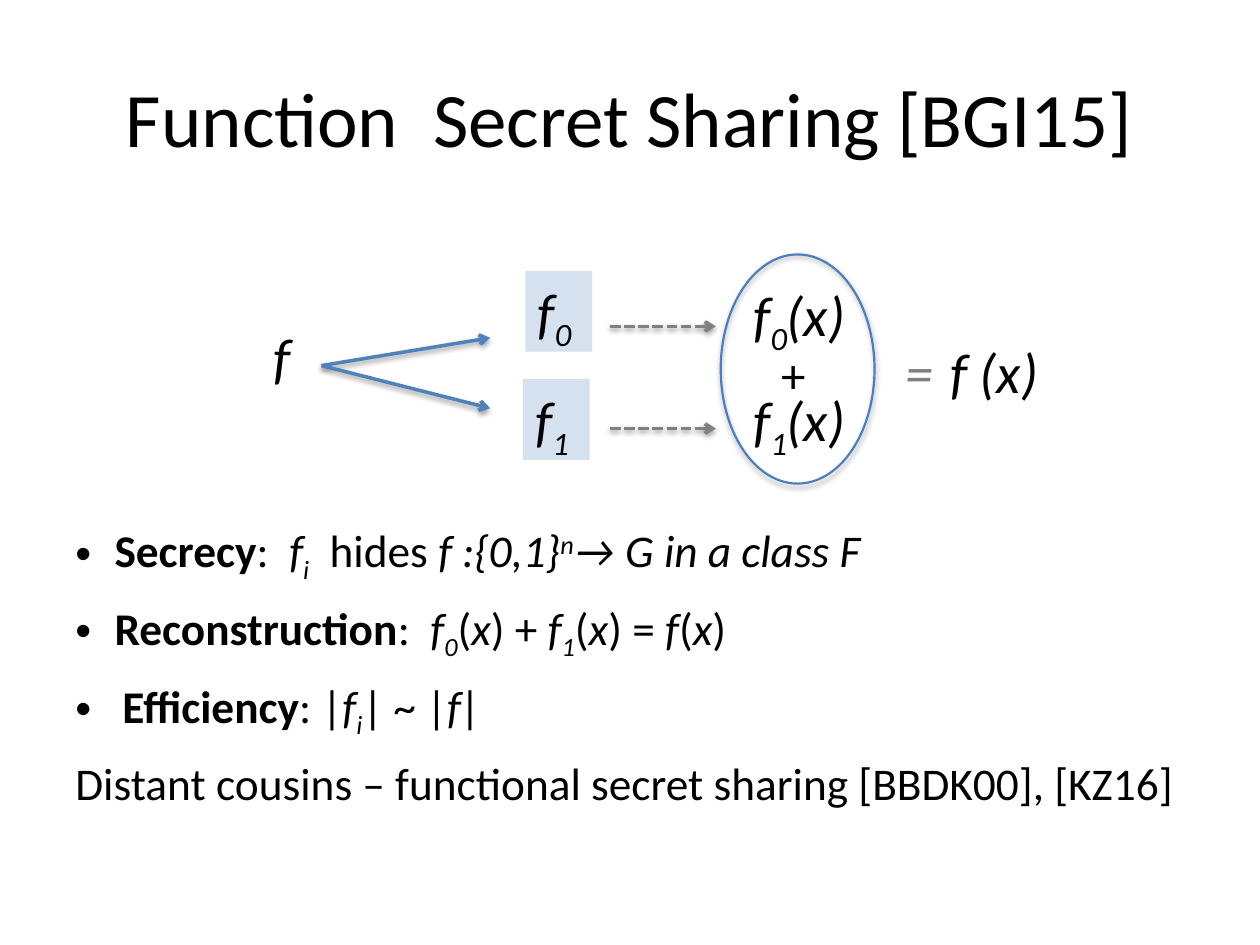
import pptx
import pptx.dml.color
import pptx.enum.dml
import pptx.enum.shapes
import pptx.enum.text
import pptx.oxml
import pptx.oxml.ns
import pptx.util
from pptx.util import Cm

BLACK, GRAY, BLUE, OUTLINE, SHARE = "000000", "808080", "4F81BD", "4B7EBC", "B9CDE5"
FORMATS = {
    "plain": {"bold": False, "italic": False},
    "bold": {"bold": True, "italic": False},
    "italic": {"bold": False, "italic": True},
}
BASELINES = {"sub": "-25000", "super": "30000"}


def color(hex_value):
    """Turn a hex string into a colour."""
    return pptx.dml.color.RGBColor.from_string(hex_value)


def element(xml):
    """Parse a drawing element written with the a: prefix."""
    tag, rest = xml[1:].split(" ", 1)
    return pptx.oxml.parse_xml(f"<{tag} {pptx.oxml.ns.nsdecls('a')} {rest}")


def add_runs(paragraph, runs, size, ink=BLACK):
    """Write (text, style, size, colour) runs, the last two being optional."""
    for text, style, *own in runs:
        run = paragraph.add_run()
        run.text = text
        values = FORMATS.get(style, FORMATS["italic"])
        for name, value in {"name": "Calibri", **values}.items():
            setattr(run.font, name, value)
        run.font.size = pptx.util.Pt(own[0] if own else size)
        run.font.color.rgb = color(own[1] if len(own) > 1 else ink)
        if style in BASELINES:
            run.font._element.set("baseline", BASELINES[style])


def write_label(shape, runs, size=32):
    """Write one unwrapped, left-aligned line in a shape."""
    frame = shape.text_frame
    layout = {
        "word_wrap": False,
        "auto_size": pptx.enum.text.MSO_AUTO_SIZE.SHAPE_TO_FIT_TEXT,
        "vertical_anchor": pptx.enum.text.MSO_ANCHOR.TOP,
    }
    for name, value in layout.items():
        setattr(frame, name, value)
    frame.paragraphs[0].alignment = pptx.enum.text.PP_ALIGN.LEFT
    add_runs(frame.paragraphs[0], runs, size)


def add_shadow(shape, distance, opacity):
    """Cast a soft shadow straight down."""
    shape._element.spPr.append(element(
        f'<a:effectLst ><a:outerShdw blurRad="40000" dist="{distance}" dir="5400000" rotWithShape="0">'
        f'<a:srgbClr val="{BLACK}"><a:alpha val="{opacity}"/></a:srgbClr></a:outerShdw></a:effectLst>'))


def add_arrow(slide, start, end, ink, dash=None):
    """Draw a shadowed arrow between two points."""
    arrow = slide.shapes.add_connector(
        pptx.enum.shapes.MSO_CONNECTOR.STRAIGHT, *start, *end)
    arrow.line.color.rgb = color(ink)
    arrow.line.width = pptx.util.Pt(2)
    if dash:
        arrow.line.dash_style = dash
    arrow.line._get_or_add_ln().append(element('<a:tailEnd type="arrow"/>'))
    add_shadow(arrow, 20000, 38000)


def add_share(slide, left, top, runs):
    """Place one share of the function on a translucent tile."""
    share = slide.shapes.add_shape(
        pptx.enum.shapes.MSO_SHAPE.RECTANGLE, left, top, Cm(1.35), Cm(1.63))
    share.shadow.inherit = False
    share.fill.solid()
    share.fill.fore_color.rgb = color(SHARE)
    tint = share._element.spPr.find(".//" + pptx.oxml.ns.qn("a:srgbClr"))
    tint.append(element('<a:alpha val="60000"/>'))
    share.line.fill.background()
    write_label(share, runs)


def add_title(slide, left, top, width, height):
    """Place the centred slide title."""
    frame = slide.shapes.add_textbox(left, top, width, height).text_frame
    frame.word_wrap = True
    frame.vertical_anchor = pptx.enum.text.MSO_ANCHOR.MIDDLE
    frame.paragraphs[0].alignment = pptx.enum.text.PP_ALIGN.CENTER
    add_runs(frame.paragraphs[0], [("Function  Secret Sharing [BGI15]", "plain")], 44)


def add_diagram(slide, left, top):
    """Show f split into shares, evaluated and added up."""
    def at(x, y):
        return left + Cm(x), top + Cm(y)

    def add_label(x, y, width, height, runs, size=32):
        box = slide.shapes.add_textbox(*at(x, y), Cm(width), Cm(height))
        write_label(box, runs, size)

    total = slide.shapes.add_shape(
        pptx.enum.shapes.MSO_SHAPE.OVAL, *at(9.27, 0), Cm(3.1), Cm(4.62))
    total.fill.background()
    total.line.color.rgb = color(OUTLINE)
    total.line.width = pptx.util.Pt(1.25)
    add_shadow(total, 23000, 35000)

    add_label(0, 1.24, 1.19, 1.63, [("f", "italic")])
    rows = [("0", 5.33, 0.33, 1.68, 1.45, 0.41), ("1", 5.28, 2.51, 3.1, 3.51, 2.51)]
    for index, share_x, share_y, split_y, evaluate_y, value_y in rows:
        name = [("f", "italic"), (index, "sub")]
        add_share(slide, *at(share_x, share_y), name)
        add_arrow(slide, at(1.22, 2.24), at(4.62, split_y), BLUE)
        add_arrow(slide, at(7.04, evaluate_y), at(9.17, evaluate_y), GRAY,
                  pptx.enum.dml.MSO_LINE.SQUARE_DOT)
        add_label(9.68, value_y, 2.54, 1.63, name + [("(x)", "italic")])
    add_label(10.24, 1.7, 1.09, 1.45, [("+", "plain")], 28)
    add_label(12.75, 1.55, 3.43, 1.63, [
        ("= ", "italic", 32, GRAY), (" ", "italic", 10, GRAY), ("f (x)", "italic")])


def add_properties(slide, left, top, width, height):
    """List the properties, followed by an unbulleted remark."""
    properties = [
        (0.79, [("Secrecy", "bold"), (":  ", "plain"), ("f", "italic"), ("i", "sub"),
                ("  hides ", "plain"), ("f :{0,1}", "italic"), ("n", "super"),
                ("→ G in a class F", "italic")]),
        (0.79, [("Reconstruction", "bold"), (":  ", "plain"), ("f", "italic"), ("0", "sub"),
                ("(", "plain"), ("x", "italic"), (") + ", "plain"), ("f", "italic"),
                ("1", "sub"), ("(", "plain"), ("x", "italic"), (") = ", "plain"),
                ("f", "italic"), ("(", "plain"), ("x", "italic"), (")", "plain")]),
        (0.95, [("Efficiency", "bold"), (": |", "plain"), ("f", "italic"), ("i", "sub"),
                ("| ~ |", "plain"), ("f|", "italic")]),
        (0, [("Distant cousins – functional secret sharing [BBDK00], [KZ16]", "plain")]),
    ]
    frame = slide.shapes.add_textbox(left, top, width, height).text_frame
    frame.word_wrap = True
    for number, (indent, runs) in enumerate(properties):
        paragraph = frame.add_paragraph() if number else frame.paragraphs[0]
        paragraph.space_before = pptx.util.Pt(9)
        if indent:
            layout = paragraph._p.get_or_add_pPr()
            layout.set("marL", str(Cm(indent)))
            layout.set("indent", str(-Cm(indent)))
            layout.append(element('<a:buFont typeface="Arial"/>'))
            layout.append(element('<a:buChar char="•"/>'))
        add_runs(paragraph, runs, 25.9)


def main():
    """Build and save the slide."""
    deck = pptx.Presentation()
    deck.slide_width, deck.slide_height = Cm(25.4), Cm(19.05)
    slide = deck.slides.add_slide(deck.slide_layouts[6])
    add_title(slide, Cm(1.27), Cm(0.76), Cm(22.86), Cm(3.18))
    add_diagram(slide, Cm(5.26), Cm(5.13))
    add_properties(slide, Cm(1.27), Cm(10.41), Cm(22.86), Cm(5.92))
    deck.save("out.pptx")


if __name__ == "__main__":
    main()
